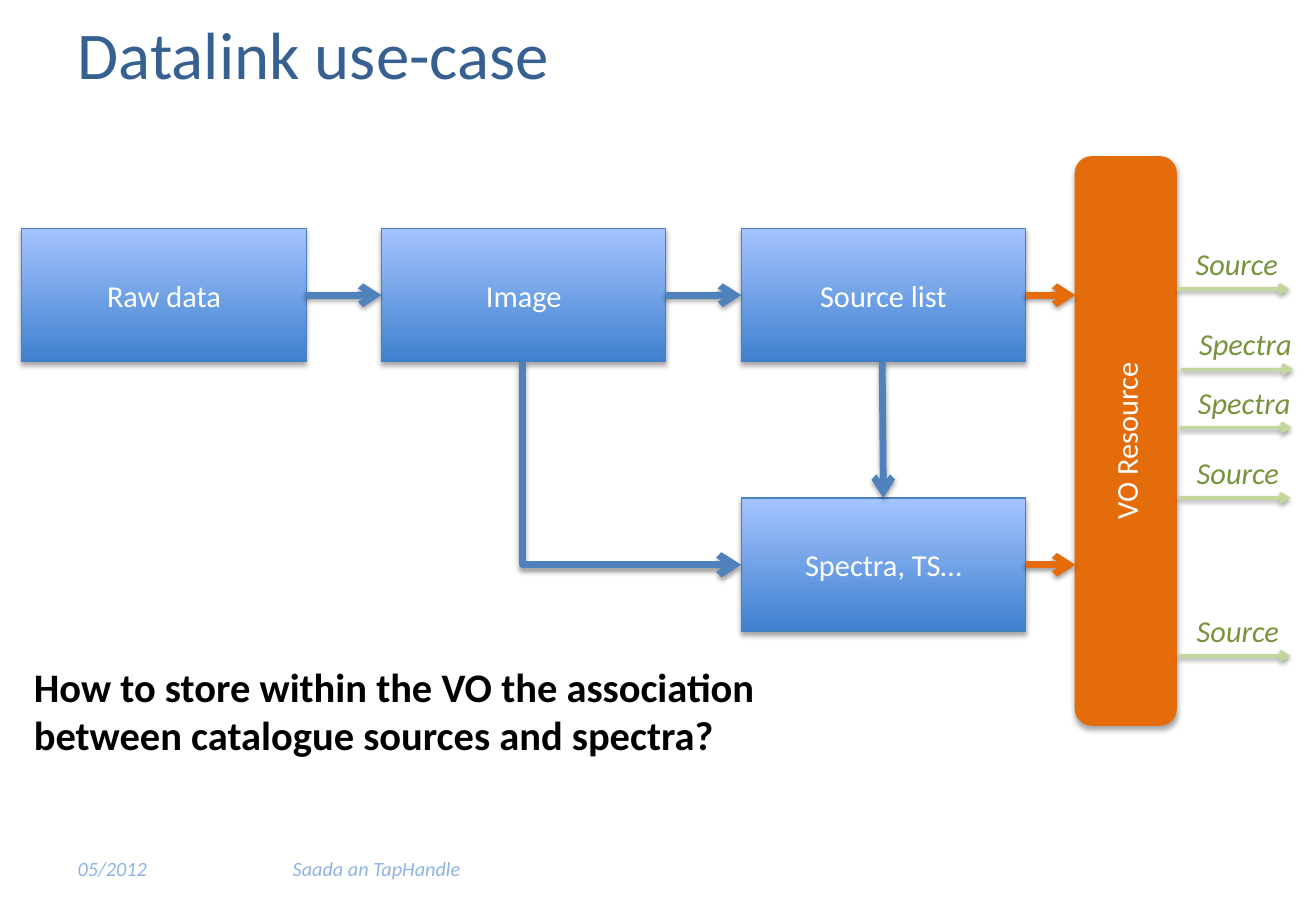
from pptx import Presentation
from pptx.dml.color import RGBColor as RGB
from pptx.enum.shapes import MSO_CONNECTOR as CONN, MSO_SHAPE as SHAPE
from pptx.enum.text import MSO_ANCHOR as ANCHOR, PP_ALIGN as ALIGN
from pptx.oxml import parse_xml
from pptx.oxml.ns import nsdecls, qn
from pptx.util import Inches, Pt
from dataclasses import dataclass


@dataclass(frozen=True)
class Theme:
    font: str = "Calibri"
    title: str = "376092"
    footer: str = "8EB4E3"
    box_low: str = "3F80CE"
    box_high: str = "A4C4FF"
    box_line: str = "4B7EBC"
    flow: str = "4F81BD"
    resource: str = "E46C0A"
    output: str = "C3D69B"
    label: str = "77933C"
    white: str = "FFFFFF"
    black: str = "000000"
    title_size: float = 39.6
    question_size: int = 24
    body_size: int = 18
    footer_size: int = 12


def rgb(color):
    return RGB.from_string(color)


def assign(obj, values):
    for name, value in values.items():
        setattr(obj, name, value)


class Deck:
    def __init__(self, theme, width, height):
        self.theme = theme
        self.prs = Presentation()
        assign(self.prs, {"slide_width": Inches(width), "slide_height": Inches(height)})
        self.slide = self.prs.slides.add_slide(self.prs.slide_layouts[6])

    def fill_text(self, tf, lines, size, color, align=ALIGN.LEFT, **style):
        values = {"name": self.theme.font, "size": Pt(size), **style}
        for i, line in enumerate(lines):
            p = tf.add_paragraph() if i else tf.paragraphs[0]
            p.alignment = align
            r = p.add_run()
            r.text = line
            assign(r.font, values)
            r.font.color.rgb = rgb(color)

    def text(self, at, lines, size, color, anchor=ANCHOR.TOP, wrap=False, **style):
        tf = self.slide.shapes.add_textbox(*map(Inches, at)).text_frame
        assign(tf, {"word_wrap": wrap, "vertical_anchor": anchor})
        self.fill_text(tf, lines, size, color, **style)

    def shadow(self, s, distance, alpha):
        s._element.spPr.append(parse_xml(
            f'<a:effectLst {nsdecls("a")}><a:outerShdw blurRad="{Pt(3.1)}" '
            f'dist="{Pt(distance)}" dir="5400000" rotWithShape="0">'
            f'<a:srgbClr val="000000"><a:alpha val="{alpha * 1000}"/></a:srgbClr>'
            '</a:outerShdw></a:effectLst>'))

    def shape(self, kind, at, label):
        s = self.slide.shapes.add_shape(kind, *map(Inches, at))
        assign(s.text_frame, {"word_wrap": True, "vertical_anchor": ANCHOR.MIDDLE})
        self.fill_text(s.text_frame, [label], self.theme.body_size, self.theme.white,
                       ALIGN.CENTER)
        return s

    def box(self, x, y, label):
        s = self.shape(SHAPE.RECTANGLE, (x, y, BOX_W, BOX_H), label)
        s.fill.gradient()
        s.fill.gradient_angle = 90
        stops = (self.theme.box_low, 0), (self.theme.box_high, 1)
        for stop, (color, position) in zip(s.fill.gradient_stops, stops):
            stop.color.rgb = rgb(color)
            stop.position = position
        s.line.color.rgb = rgb(self.theme.box_line)
        s.line.width = Pt(0.75)
        self.shadow(s, 1.8, 35)

    def bar(self, at, label):
        s = self.shape(SHAPE.ROUNDED_RECTANGLE, at, label)
        s.rotation = 270
        s.fill.solid()
        s.fill.fore_color.rgb = rgb(self.theme.resource)
        s.line.fill.background()
        self.shadow(s, 1.8, 35)

    def arrow(self, ends, color, width=4, kind=CONN.STRAIGHT):
        s = self.slide.shapes.add_connector(kind, *map(Inches, ends))
        s.line.color.rgb = rgb(color)
        s.line.width = Pt(width)
        ln = s._element.spPr.find(qn("a:ln"))
        ln.append(parse_xml(f'<a:tailEnd {nsdecls("a")} type="arrow"/>'))
        self.shadow(s, 1.6, 38)
        return s

    def corner_arrow(self, x1, y1, x2, y2, color, width):
        cx, cy = (x1 + x2) / 2, (y1 + y2) / 2
        dx, dy = (y2 - y1) / 2, (x2 - x1) / 2
        s = self.arrow((cx + dx, cy - dy, cx - dx, cy + dy), color, width, CONN.ELBOW)
        spPr = s._element.spPr
        spPr.find(qn("a:xfrm")).set("rot", "16200000")
        spPr.find(qn("a:prstGeom")).set("prst", "bentConnector2")

    def output(self, x, y, label):
        theme = self.theme
        width = 1.03 if label == "Spectra" else 0.95
        self.text((x + 0.05, y - 0.41, width, 0.4), [label], theme.body_size, theme.label,
                  italic=True)
        self.arrow((x, y, x + 0.92, y), theme.output, 2)


BOX_W, BOX_H = 2.34, 1.1
COLUMNS = 0.18, 3.14, 6.1
TOP, BOTTOM = 1.88, 4.1
TOP_MID, BOTTOM_MID = TOP + BOX_H / 2, BOTTOM + BOX_H / 2
BAR_LEFT = 8.85
OUTPUTS = [("Source", 9.69, 2.38), ("Spectra", 9.72, 3.04), ("Spectra", 9.71, 3.52),
           ("Source", 9.7, 4.1), ("Source", 9.7, 5.4)]


def main():
    theme = Theme()
    deck = Deck(theme, 10.83, 7.5)
    deck.text((0.54, 0.09, 9.75, 0.68), ["Datalink use-case"], theme.title_size, theme.title,
              ANCHOR.MIDDLE, True)
    for x, width, label in [(0.54, 2.97, "05/2012"), (2.31, 4.82, "Saada an TapHandle")]:
        deck.text((x, 6.95, width, 0.4), [label], theme.footer_size, theme.footer,
                  ANCHOR.MIDDLE, True, italic=True)

    for x, label in zip(COLUMNS, ("Raw data", "Image", "Source list")):
        deck.box(x, TOP, label)
    deck.box(COLUMNS[2], BOTTOM, "Spectra, TS…")
    for left, right in zip(COLUMNS, COLUMNS[1:]):
        deck.arrow((left + BOX_W - 0.01, TOP_MID, right, TOP_MID), theme.flow)
    deck.arrow((7.26, TOP + BOX_H, 7.27, BOTTOM), theme.flow)
    deck.corner_arrow(4.3, TOP + BOX_H, COLUMNS[2], BOTTOM_MID, theme.flow, 4.25)

    deck.bar((6.92, 3.21, 4.69, 0.84), "VO Resource")
    for y in (TOP_MID, BOTTOM_MID):
        deck.arrow((COLUMNS[2] + BOX_W, y, BAR_LEFT, y), theme.resource)
    for label, x, y in OUTPUTS:
        deck.output(x, y, label)

    deck.text((0.18, 5.4, 6.19, 0.91),
              ["How to store within the VO the association",
               "between catalogue sources and spectra?"],
              theme.question_size, theme.black, bold=True)
    deck.prs.save("out.pptx")


if __name__ == "__main__":
    main()
